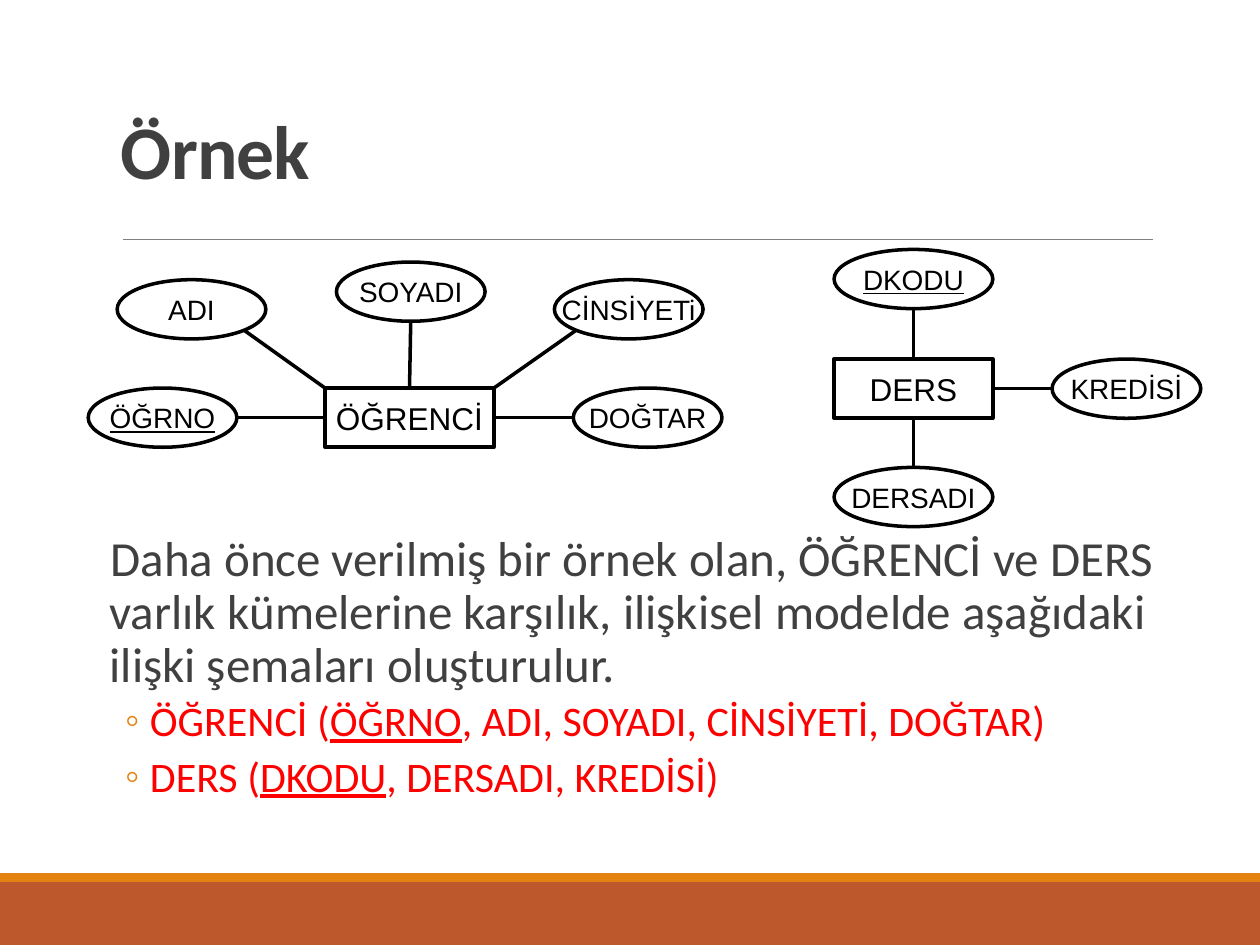
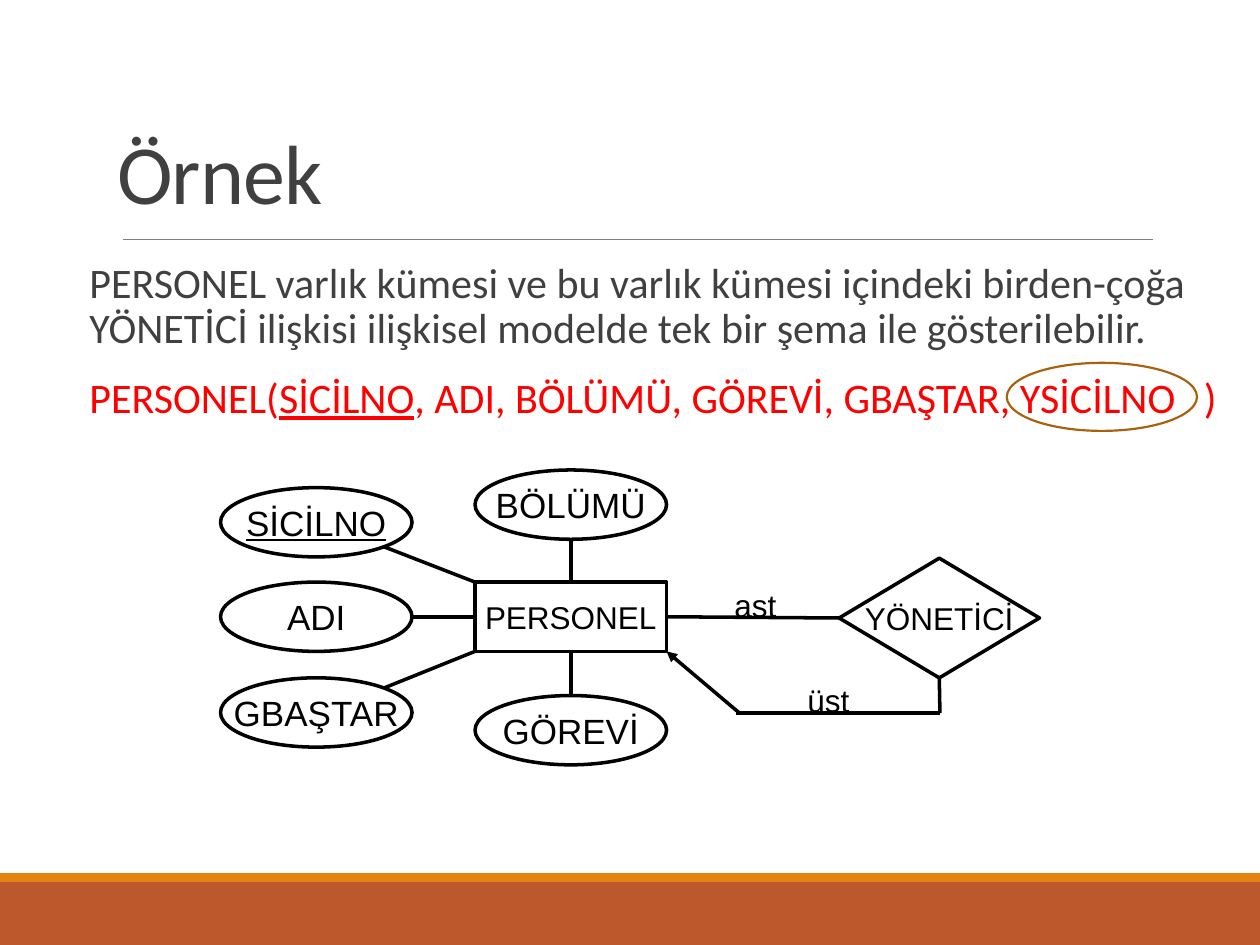
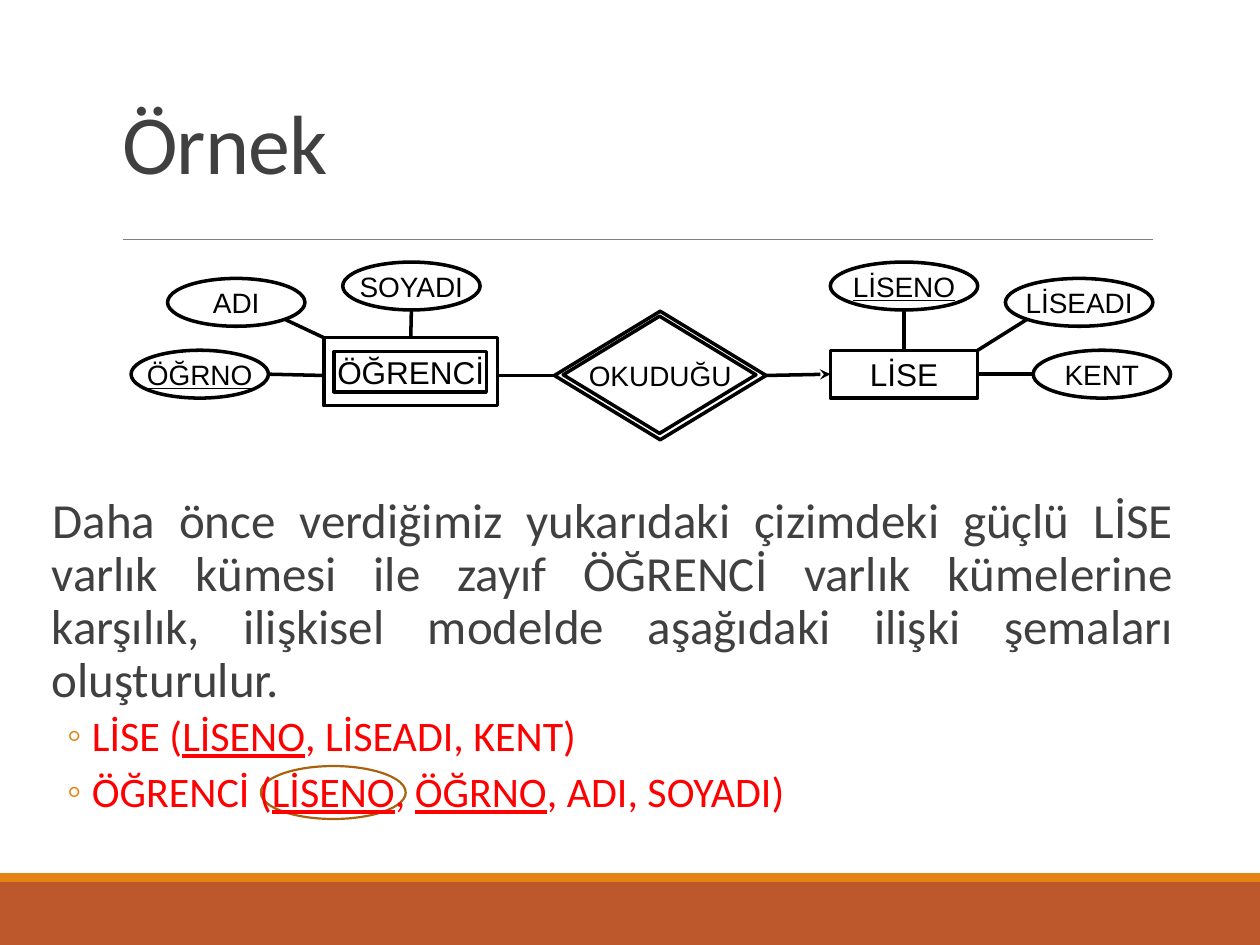
from dataclasses import dataclass

from lxml import etree
from pptx import Presentation
from pptx import util as u
from pptx.dml.color import RGBColor
from pptx.enum import shapes, text
from pptx.oxml import ns

COLUMNS, ROWS = 100, 75
DIAGONAL = 0.707
SIDES = {"top": (0, -1), "left": (-1, 0), "bottom": (0, 1), "right": (1, 0),
         "top left": (-1, -1), "top right": (1, -1),
         "bottom left": (-1, 1), "bottom right": (1, 1)}
SITES = list(SIDES)[:4]
OPPOSITE = {name: other for name, (x, y) in SIDES.items()
            for other, direction in SIDES.items() if direction == (-x, -y)}
RECTANGLE = shapes.MSO_SHAPE.RECTANGLE
OVAL = shapes.MSO_SHAPE.OVAL
DIAMOND = shapes.MSO_SHAPE.DIAMOND


@dataclass(frozen=True)
class Theme:
    text_font: str = "Calibri"
    diagram_font: str = "Arial"
    ink: str = "404040"
    schema: str = "FF0000"
    outline: str = "000000"
    paper: str = "FFFFFF"
    band: str = "BD582C"
    accent: str = "E48312"
    ring: str = "A9610D"
    rule: str = "808080"
    title: float = 48
    body: float = 28
    detail: float = 24
    entity: float = 18
    attribute: float = 16
    large_attribute: float = 20
    stroke: float = 2


def assign(target, values):
    for name, value in values.items():
        setattr(target, name, value)


class Deck:
    def __init__(self, theme):
        self.theme = theme
        self.presentation = Presentation()
        assign(self.presentation, {"slide_width": u.Inches(10), "slide_height": u.Inches(7.5)})
        self.layout = self.presentation.slide_layouts[1]
        self.column = self.presentation.slide_width / COLUMNS
        self.row = self.presentation.slide_height / ROWS
        self.slide = None

    def box(self, left, top, width, height):
        return (round(left * self.column), round(top * self.row),
                round(width * self.column), round(height * self.row))

    def new_slide(self, box, size, bold=False):
        first = self.slide is None
        self.slide = self.presentation.slides.add_slide(self.layout)
        if first:
            self.decorate_layout()
        title = self.slide.shapes.title
        self.place(title, box)
        assign(title.text_frame, {"vertical_anchor": text.MSO_ANCHOR.BOTTOM, "word_wrap": True,
                                  "auto_size": text.MSO_AUTO_SIZE.NONE})
        paragraph = title.text_frame.paragraphs[0]
        assign(paragraph, {"alignment": text.PP_ALIGN.LEFT, "line_spacing": 0.85})
        self.add_text(paragraph, "Örnek", size, self.theme.text_font, self.theme.ink, bold)
        for run in paragraph.runs:
            run.font._element.set("spc", "-50")

    def decorate_layout(self):
        decorations = [
            self.shape(RECTANGLE, (0, 70, 100, 5), fill=self.theme.band),
            self.shape(RECTANGLE, (0, 69.3, 100, 0.7), fill=self.theme.accent),
            self.link((9.8, 19), (91.5, 19), color=self.theme.rule, weight=0.5)]
        for decoration in decorations:
            self.layout.shapes.element.append(decoration.element)

    def place(self, shape, box):
        assign(shape, dict(zip(("left", "top", "width", "height"), self.box(*box))))

    def add_text(self, paragraph, content, size, font, color, bold=False):
        for index, part in enumerate(content.split("_")):
            if part:
                run = paragraph.add_run()
                run.text = part
                assign(run.font, {"size": u.Pt(size), "name": font, "bold": bold,
                                  "underline": index % 2 == 1})
                run.font.color.rgb = RGBColor.from_string(color)

    def body(self, box, items, alignment=text.PP_ALIGN.LEFT):
        placeholder = self.slide.placeholders[1]
        self.place(placeholder, box)
        frame = placeholder.text_frame
        assign(frame, {"margin_left": 0, "margin_right": 0, "word_wrap": True,
                       "auto_size": text.MSO_AUTO_SIZE.NONE})
        for index, (content, level, size, color) in enumerate(items):
            paragraph = frame.add_paragraph() if index else frame.paragraphs[0]
            before, after, margin, hanging, bullet = (
                (2, 4, 0.42, 0.2, "◦") if level else (12, 2, 0.1, 0.1, " "))
            assign(paragraph, {"level": level, "alignment": alignment, "line_spacing": 0.9,
                               "space_before": u.Pt(before), "space_after": u.Pt(after)})
            self.add_text(paragraph, content, size, self.theme.text_font, color)
            properties = paragraph._p.get_or_add_pPr()
            properties.set("marL", str(u.Inches(margin)))
            properties.set("indent", str(-u.Inches(hanging)))
            bullet_color = etree.SubElement(properties, ns.qn("a:buClr"))
            etree.SubElement(bullet_color, ns.qn("a:srgbClr")).set("val", self.theme.accent)
            etree.SubElement(properties, ns.qn("a:buChar")).set("char", bullet)

    def shape(self, kind, box, fill=None, line=None, weight=None):
        shape = self.slide.shapes.add_shape(kind, *self.box(*box))
        shape.shadow.inherit = False
        for part, color in ((shape.fill, fill), (shape.line.fill, line)):
            if color:
                part.solid()
                part.fore_color.rgb = RGBColor.from_string(color)
            else:
                part.background()
        if line:
            shape.line.width = u.Pt(weight or self.theme.stroke)
        return shape

    def node(self, kind, box, label="", size=None):
        shape = self.shape(kind, box, line=self.theme.outline)
        if label:
            frame = shape.text_frame
            assign(frame, {"word_wrap": False, "vertical_anchor": text.MSO_ANCHOR.MIDDLE})
            frame.paragraphs[0].alignment = text.PP_ALIGN.CENTER
            self.add_text(frame.paragraphs[0], label, size or self.theme.entity,
                          self.theme.diagram_font, self.theme.outline)
        return shape

    def attributes(self, entity, size, rows, text_size):
        for label, left, top, side in rows:
            oval = self.node(OVAL, (left, top, *size), label, text_size)
            self.link((oval, side), (entity, OPPOSITE[side]))

    def ring(self, box):
        ring = self.shape(OVAL, box, self.theme.paper, self.theme.ring, 1.25)
        self.slide.shapes.element.insert(2, ring.element)

    def label(self, box, content):
        frame = self.slide.shapes.add_textbox(*self.box(*box)).text_frame
        frame.word_wrap = True
        self.add_text(frame.paragraphs[0], content, self.theme.entity,
                      self.theme.diagram_font, self.theme.outline)

    def point(self, end):
        target, side = end
        if not isinstance(side, str):
            return round(target * self.column), round(side * self.row)
        x, y = SIDES[side]
        reach = DIAGONAL if x and y and target.auto_shape_type == OVAL else 1
        return (round(target.left + target.width * (1 + x * reach) / 2),
                round(target.top + target.height * (1 + y * reach) / 2))

    def link(self, start, end, arrow=None, color=None, weight=None):
        connector = self.slide.shapes.add_connector(
            shapes.MSO_CONNECTOR.STRAIGHT, *self.point(start), *self.point(end))
        for join, (target, side) in ((connector.begin_connect, start),
                                     (connector.end_connect, end)):
            if side in SITES and target.auto_shape_type != OVAL:
                join(target, SITES.index(side))
        connector.line.width = u.Pt(weight or self.theme.stroke)
        connector.line.color.rgb = RGBColor.from_string(color or self.theme.outline)
        if arrow:
            etree.SubElement(connector.line._get_or_add_ln(), ns.qn("a:tailEnd")).set("type", arrow)
        etree.SubElement(connector._element.spPr, ns.qn("a:effectLst"))
        return connector


def student_and_course(deck):
    theme = deck.theme
    deck.new_slide((8.6, 9.4, 82.5, 6.6), 43.2, bold=True)
    deck.body((7.7, 41.9, 85.7, 29.4), [
        ("Daha önce verilmiş bir örnek olan, ÖĞRENCİ ve DERS varlık kümelerine karşılık, "
         "ilişkisel modelde aşağıdaki ilişki şemaları oluşturulur.", 0, theme.body, theme.ink),
        ("ÖĞRENCİ (_ÖĞRNO_, ADI, SOYADI, CİNSİYETİ, DOĞTAR)", 1, theme.detail, theme.schema),
        ("DERS (_DKODU_, DERSADI, KREDİSİ)", 1, theme.detail, theme.schema)])
    student = deck.node(RECTANGLE, (25.8, 30.8, 13.4, 4.7), "ÖĞRENCİ")
    deck.attributes(student, (11.8, 4.7), [
        ("ADI", 9.3, 22.2, "bottom right"), ("SOYADI", 26.7, 20.8, "bottom"),
        ("CİNSİYETi", 44, 22.2, "bottom left"), ("_ÖĞRNO_", 7, 30.8, "right"),
        ("DOĞTAR", 45.5, 30.8, "left")], theme.attribute)
    course = deck.node(RECTANGLE, (66.2, 28.5, 12.6, 4.7), "DERS")
    deck.attributes(course, (12.6, 4.7), [
        ("_DKODU_", 66.2, 19.8, "bottom"), ("DERSADI", 66.2, 37.1, "top")], theme.attribute)
    deck.attributes(course, (11.8, 4.7), [("KREDİSİ", 83.5, 28.5, "left")], theme.attribute)


def staff_and_manager(deck):
    theme = deck.theme
    deck.new_slide((8.3, 9.5, 82, 8.6), theme.title)
    deck.body((6.1, 20.3, 91.3, 17), [
        ("PERSONEL varlık kümesi ve bu varlık kümesi içindeki birden-çoğa YÖNETİCİ ilişkisi "
         "ilişkisel modelde tek bir şema ile gösterilebilir.", 0, theme.detail, theme.ink),
        ("PERSONEL(_SİCİLNO_, ADI, BÖLÜMÜ, GÖREVİ, GBAŞTAR, YSİCİLNO   )",
         0, theme.detail, theme.schema)])
    deck.ring((79.9, 28.8, 15.1, 5.4))
    staff = deck.node(RECTANGLE, (37.7, 46.2, 15.2, 5.5), "PERSONEL")
    manager = deck.node(DIAMOND, (66.6, 44.3, 15.9, 9.5), "YÖNETİCİ")
    deck.attributes(staff, (15.2, 5.5), [
        ("_SİCİLNO_", 17.5, 38.7, "bottom right"), ("ADI", 17.5, 46.2, "right"),
        ("GBAŞTAR", 17.5, 53.8, "top right"), ("BÖLÜMÜ", 37.7, 37.3, "bottom"),
        ("GÖREVİ", 37.7, 55.2, "top")], theme.large_attribute)
    deck.link((staff, "right"), (manager, "left"))
    deck.link((manager, "bottom"), (74.6, 56.6))
    deck.link((74.6, 56.6), (58.4, 56.6))
    deck.link((58.7, 56.6), (staff, "bottom right"), "triangle")
    deck.label((57.3, 46, 5.8, 3.3), "ast")
    deck.label((63.1, 53.6, 5.8, 3.3), "üst")


def student_and_school(deck):
    theme = deck.theme
    deck.new_slide((8.7, 7.6, 82.5, 8.1), theme.title)
    deck.body((3.1, 38.9, 90, 29.4), [
        ("Daha önce verdiğimiz yukarıdaki çizimdeki güçlü LİSE varlık kümesi ile zayıf ÖĞRENCİ "
         "varlık kümelerine karşılık, ilişkisel modelde aşağıdaki ilişki şemaları oluşturulur.",
         0, theme.body, theme.ink),
        ("LİSE (_LİSENO_, LİSEADI, KENT)", 1, theme.detail, theme.schema),
        ("ÖĞRENCİ (_LİSENO_, _ÖĞRNO_, ADI, SOYADI)", 1, theme.detail, theme.schema)],
        text.PP_ALIGN.JUSTIFY)
    deck.ring((20.7, 60.8, 11.5, 4.2))
    student = deck.node(RECTANGLE, (25.7, 26.8, 13.8, 5.4), "ÖĞRENCİ")
    deck.node(RECTANGLE, (26.5, 27.9, 12.1, 3.2))
    attends = deck.node(DIAMOND, (44, 24.7, 16.8, 10.2), "OKUDUĞU", theme.attribute)
    deck.node(DIAMOND, (44.7, 25.1, 15.3, 9.3))
    school = deck.node(RECTANGLE, (65.9, 27.8, 11.7, 3.8), "LİSE")
    deck.attributes(student, (10.9, 3.8), [
        ("ADI", 13.3, 22.1, "bottom right"), ("SOYADI", 27.2, 20.8, "bottom")], theme.attribute)
    number = deck.node(OVAL, (10.4, 27.8, 10.9, 3.8), "_ÖĞRNO_", theme.attribute)
    deck.link((number, "right"), (25.7, 29.8))
    deck.attributes(school, (11.7, 3.8), [
        ("_LİSENO_", 65.9, 20.8, "bottom"), ("LİSEADI", 79.8, 22.1, "bottom left")],
        theme.attribute)
    deck.attributes(school, (10.9, 3.8), [("KENT", 82, 27.8, "left")], theme.attribute)
    deck.link((39.5, 29.8), (attends, "left"))
    deck.link((attends, "right"), (school, "left"), "stealth")


def main():
    deck = Deck(Theme())
    student_and_course(deck)
    staff_and_manager(deck)
    student_and_school(deck)
    deck.presentation.save("out.pptx")


if __name__ == "__main__":
    main()
